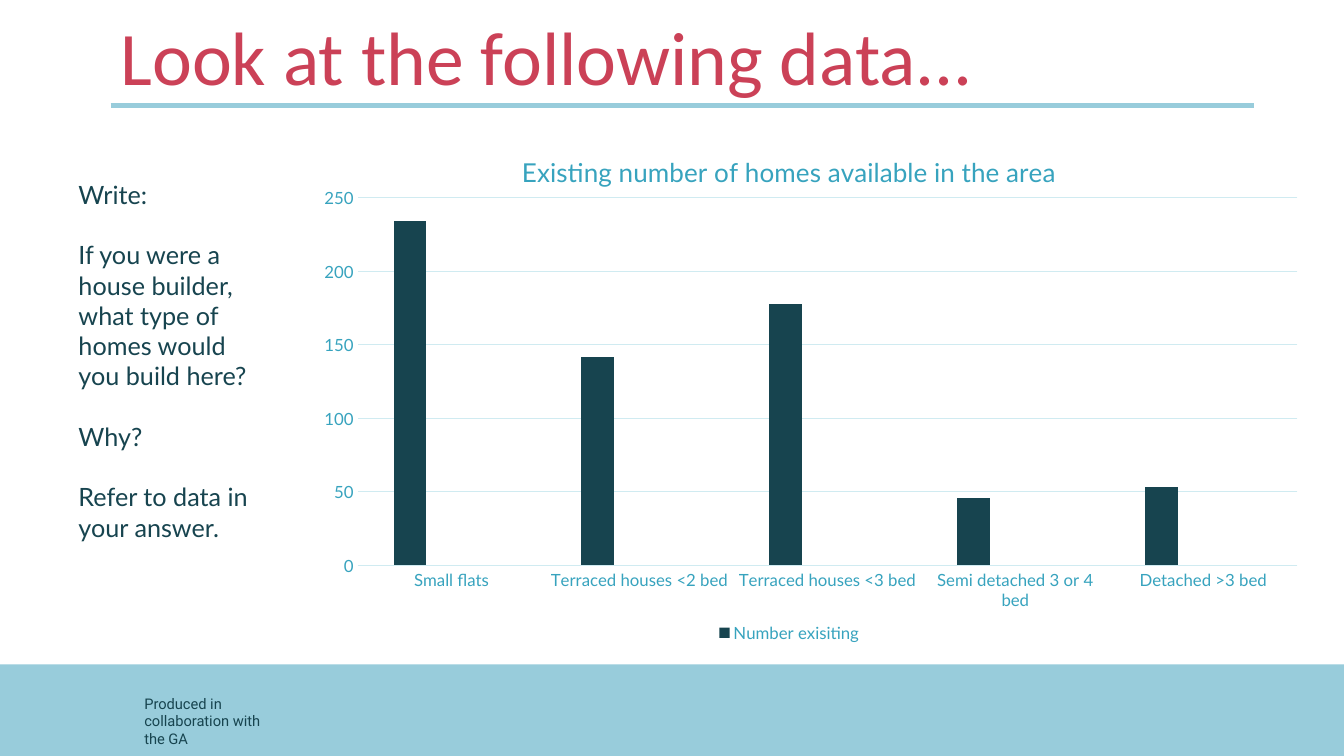
from lxml import etree
from pptx import Presentation
from pptx.chart.data import CategoryChartData
from pptx.dml.color import RGBColor
from pptx.enum import chart as ch, shapes, text
from pptx.oxml import parse_xml
from pptx.oxml.ns import nsdecls, qn
from pptx.util import Pt

NAVY, TEAL, SKY, PALE = "17444F", "37A3BE", "98CCDB", "D0EBF1"
RED, YELLOW = "CB4157", "EAC756"


def rgb(color):
    return RGBColor.from_string(color)


def add_text(box, paragraphs, font, size, color, gap=0, anchor=text.MSO_ANCHOR.TOP):
    """Add a wrapped text box at box, with gap points between paragraphs."""
    tf = s.shapes.add_textbox(*map(Pt, box)).text_frame
    tf.word_wrap = True
    tf.vertical_anchor = anchor
    for i, line in enumerate(paragraphs):
        p = tf.paragraphs[0] if i == 0 else tf.add_paragraph()
        if i:
            p.space_before = Pt(gap)
        r = p.add_run()
        r.text = line
        r.font.name, r.font.size = font, Pt(size)
        r.font.color.rgb = rgb(color)


prs = Presentation()
prs.slide_width, prs.slide_height = Pt(960), Pt(540)
s = prs.slides.add_slide(prs.slide_layouts[6])

# Footer band and heading
band = s.shapes.add_shape(shapes.MSO_SHAPE.RECTANGLE, Pt(0), Pt(474.5), Pt(960), Pt(65.5))
band.shadow.inherit = False
band.fill.solid()
band.fill.fore_color.rgb = rgb(SKY)
band.line.fill.background()
add_text((96, 492.5, 98.5, 44.5), ["Produced in collaboration with the GA"], "Roboto", 10.5, NAVY)

rule = s.shapes.add_connector(shapes.MSO_CONNECTOR.STRAIGHT, Pt(79), Pt(75.5), Pt(895.5), Pt(75.5))
rule.line.color.rgb = rgb(SKY)
rule.line.width = Pt(3.5)
etree.SubElement(rule._element.spPr, qn("a:effectLst"))
add_text((79, 5, 816, 70.5), ["Look at the following data..."], "Calibri", 54, RED,
         anchor=text.MSO_ANCHOR.BOTTOM)

# Task
task = ["Write:",
        "If you were a house builder, what type of homes would you build here?",
        "Why?",
        "Refer to data in your answer."]
add_text((49, 124.5, 152.5, 227), task, "Lato", 18, NAVY, gap=21.6)

# Chart of homes
homes = CategoryChartData()
homes.categories = ["Small flats", "Terraced houses <2 bed", "Terraced houses <3 bed",
                    "Semi detached 3 or 4 bed", "Detached >3 bed"]
homes.add_series("Number exisiting", [234, 142, 178, 46, 53])
for name in ("Series 2", "Series 3"):
    homes.add_series(name, [None] * 5)
chart = s.shapes.add_chart(ch.XL_CHART_TYPE.COLUMN_CLUSTERED, Pt(201), Pt(95),
                           Pt(726), Pt(367), homes).chart
chart.font.name, chart.font.size = "Lato", Pt(10)
chart.font.color.rgb = rgb(NAVY)

r = chart.chart_title.text_frame.paragraphs[0].add_run()
r.text = "Existing number of homes available in the area"
r.font.name, r.font.size, r.font.bold = "Lato", Pt(18.6), False
r.font.color.rgb = rgb(TEAL)

plot = chart.plots[0]
plot.gap_width, plot.overlap, plot.vary_by_categories = 219, -27, False
for series, color in zip(plot.series, (NAVY, RED, YELLOW)):
    series.format.fill.solid()
    series.format.fill.fore_color.rgb = rgb(color)

chart.has_legend = True
legend = chart.legend
legend.position = ch.XL_LEGEND_POSITION.BOTTOM
legend.include_in_layout = False
cat_axis, val_axis = chart.category_axis, chart.value_axis
for font in (cat_axis.tick_labels.font, val_axis.tick_labels.font, legend.font):
    font.name, font.size = "Lato", Pt(12)
    font.color.rgb = rgb(TEAL)
for axis in (cat_axis, val_axis):
    axis.major_tick_mark = axis.minor_tick_mark = ch.XL_TICK_MARK.NONE
val_axis.minimum_scale, val_axis.maximum_scale, val_axis.major_unit = 0, 250, 50
val_axis.has_major_gridlines = True
for line in (cat_axis.format.line, val_axis.major_gridlines.format.line):
    line.color.rgb = rgb(PALE)
    line.width = Pt(0.75)
val_axis.format.line.fill.background()

# Keep the empty series out of the legend
for i in (2, 1):
    legend._element.find(qn("c:legendPos")).addnext(parse_xml(
        f'<c:legendEntry {nsdecls("c")}><c:idx val="{i}"/><c:delete val="1"/></c:legendEntry>'))

# Fix the inner plot area as fractions of the chart
area = chart._chartSpace.chart.plotArea
for old in area.findall(qn("c:layout")):
    area.remove(old)
places = "".join(f'<c:{tag} val="{val}"/>' for tag, val in (
    ("layoutTarget", "inner"), ("xMode", "edge"), ("yMode", "edge"),
    ("x", 0.075), ("y", 0.126), ("w", 0.925), ("h", 0.716)))
area.insert(0, parse_xml(
    f'<c:layout {nsdecls("c")}><c:manualLayout>{places}</c:manualLayout></c:layout>'))

prs.save("out.pptx")
